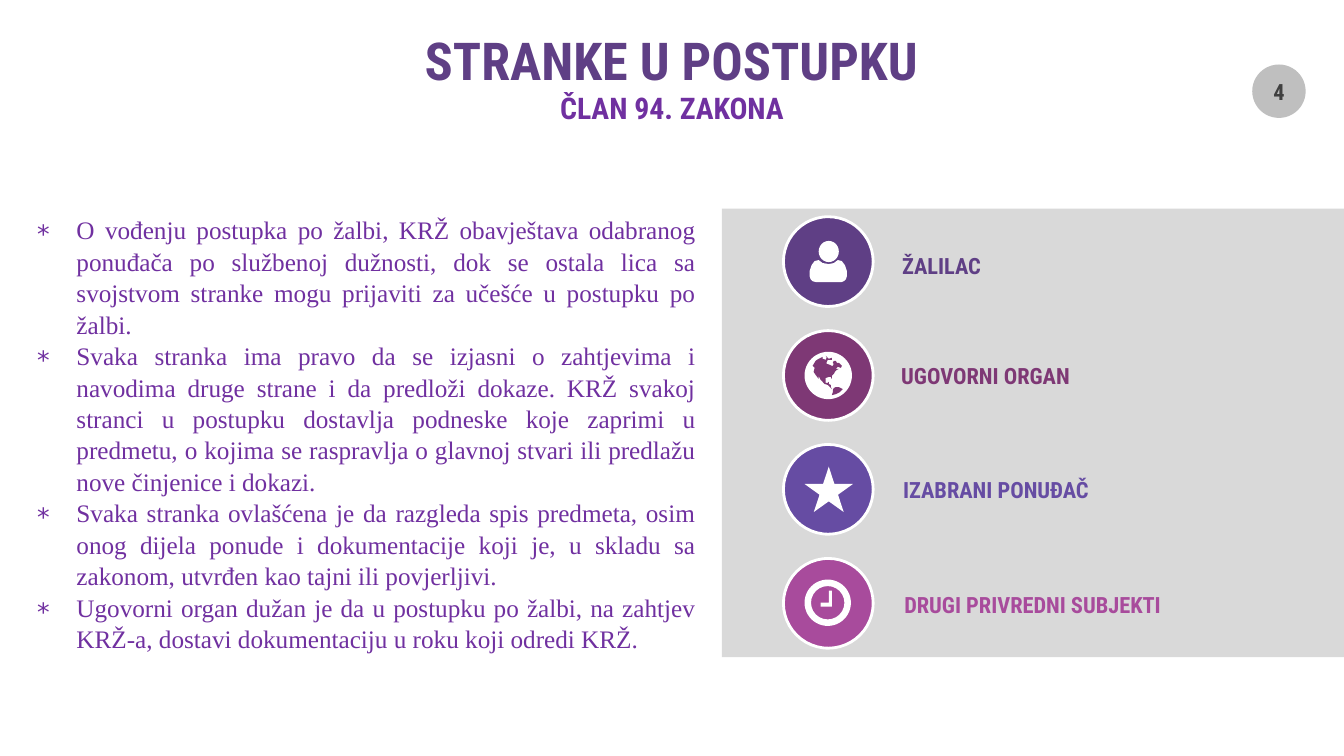
from lxml import etree
from pptx import Presentation
from pptx.dml.color import RGBColor
from pptx.enum.shapes import MSO_SHAPE as SHAPE
from pptx.enum.text import MSO_ANCHOR as ANCHOR, PP_ALIGN as ALIGN
from pptx.oxml.ns import qn
from pptx.util import Inches, Pt

HEADING_FONT = "Roboto Condensed"
WHITE = "FFFFFF"
VIOLET = "7030A0"


def paint(obj, fill=None, line=None, font=None, size=None, name=HEADING_FONT, bold=True):
    if fill:
        obj.shadow.inherit = False
        obj.fill.solid()
        obj.fill.fore_color.rgb = RGBColor.from_string(fill)
        if line:
            obj.line.color.rgb = RGBColor.from_string(line)
            obj.line.width = Pt(2)
        else:
            obj.line.fill.background()
    if font:
        obj.font.name = name
        obj.font.size = Pt(size)
        obj.font.bold = bold
        obj.font.color.rgb = RGBColor.from_string(font)


def add(kind, x, y, w, h, fill, line=None):
    sp = s.shapes.add_shape(kind, Inches(x), Inches(y), Inches(w), Inches(h))
    paint(sp, fill, line)
    return sp


prs = Presentation()
prs.slide_width, prs.slide_height = Inches(13.33), Inches(7.5)
s = prs.slides.add_slide(prs.slide_layouts[5])

badge = add(SHAPE.OVAL, 12.42, 0.64, 0.53, 0.53, "BFBFBF")
title = s.shapes.title
title.left, title.top = Inches(3.19), Inches(0.29)
title.width, title.height = Inches(6.94), Inches(0.61)
subtitle = s.shapes.add_textbox(Inches(4.77), Inches(0.92), Inches(3.79), Inches(0.29))

for sp, text, size, color in (
    (badge, "4", 16, "404040"),
    (title, "STRANKE U POSTUPKU", 37.3, "5F3F85"),
    (subtitle, "ČLAN 94. ZAKONA", 21.3, VIOLET),
):
    tf = sp.text_frame
    tf.margin_left = tf.margin_right = tf.margin_top = tf.margin_bottom = 0
    tf.vertical_anchor = ANCHOR.MIDDLE
    tf.word_wrap = sp is not title
    p = tf.paragraphs[0]
    p.text = text
    p.alignment = ALIGN.CENTER
    paint(p, font=color, size=size)

add(SHAPE.RECTANGLE, 7.16, 2.07, 6.17, 4.45, "D9D9D9")

parties = [
    ("ŽALILAC", "5F3F85", 8.85, 2.45, 1.16),
    ("UGOVORNI ORGAN", "7E3875", 8.84, 3.54, 2.32),
    ("IZABRANI PONUĐAČ", "664CA3", 8.86, 4.67, 2.47),
    ("DRUGI PRIVREDNI SUBJEKTI", "A84B9C", 8.87, 5.82, 3.38),
]
for i, (text, color, x, y, w) in enumerate(parties):
    add(SHAPE.OVAL, 7.77, 2.15 + 1.13 * i, 0.89, 0.89, color, WHITE)
    tf = s.shapes.add_textbox(Inches(x), Inches(y), Inches(w), Inches(0.37)).text_frame
    tf.word_wrap = False
    p = tf.paragraphs[0]
    p.text = text
    paint(p, font=color, size=16)

add(SHAPE.OVAL, 8.12, 2.39, 0.2, 0.21, WHITE)
add(SHAPE.OVAL, 7.98, 3.49, 0.47, 0.47, WHITE)
add(SHAPE.STAR_5_POINT, 7.98, 4.63, 0.48, 0.45, WHITE)
clock = add(SHAPE.DONUT, 7.98, 5.75, 0.46, 0.46, WHITE)
clock.adjustments[0] = 0.14

shoulders = [
    (834, 280), (810, 280), (806, 279), (804, 277), (803, 274), (803, 269), (805, 263),
    (808, 259), (812, 258), (816, 261), (822, 262), (827, 261), (831, 258), (835, 259),
    (838, 263), (840, 269), (840, 274), (839, 277), (837, 279),
]
north_america = [
    (829, 366), (831, 364), (834, 365), (835, 363), (833, 361), (832, 360), (830, 360),
    (829, 358), (827, 358), (826, 360), (827, 361), (826, 363), (825, 363), (823, 362),
    (820, 361), (820, 359), (821, 357), (823, 357), (825, 357), (825, 355), (822, 356),
    (820, 354), (819, 353), (820, 355), (819, 357), (816, 356), (816, 354), (812, 356),
    (809, 358), (806, 363), (808, 365), (807, 369), (809, 372), (812, 376), (812, 373),
    (814, 377), (816, 379), (818, 381), (821, 382), (823, 384), (825, 386), (824, 384),
    (824, 382), (822, 381), (822, 379), (821, 380), (819, 380), (819, 375), (822, 374),
    (824, 374), (825, 376), (825, 373), (827, 371), (828, 369), (830, 367), (832, 366),
]
south_america = [
    (836, 386), (834, 385), (832, 384), (829, 384), (827, 385), (826, 387), (826, 389),
    (825, 392), (829, 391), (833, 389),
]
clock_hands = [(814, 598), (822, 598), (822, 586), (825, 586), (825, 602), (814, 602)]

for outline, color in (
    (shoulders, WHITE),
    (north_america, parties[1][1]),
    (south_america, parties[1][1]),
    (clock_hands, WHITE),
):
    builder = s.shapes.build_freeform(*outline[0], scale=Inches(0.01))
    builder.add_line_segments(outline[1:], close=True)
    paint(builder.convert_to_shape(), color)

rules = [
    "O vođenju postupka po žalbi, KRŽ obavještava odabranog ponuđača po službenoj dužnosti, "
    "dok se ostala lica sa svojstvom stranke mogu prijaviti za učešće u postupku po žalbi.",
    "Svaka stranka ima pravo da se izjasni o zahtjevima i navodima druge strane i da predloži "
    "dokaze. KRŽ svakoj stranci u postupku dostavlja podneske koje zaprimi u predmetu, o kojima "
    "se raspravlja o glavnoj stvari ili predlažu nove činjenice i dokazi.",
    "Svaka stranka ovlašćena je da razgleda spis predmeta, osim onog dijela ponude i "
    "dokumentacije koji je, u skladu sa zakonom, utvrđen kao tajni ili povjerljivi.",
    "Ugovorni organ dužan je da u postupku po žalbi, na zahtjev KRŽ-a, dostavi dokumentaciju "
    "u roku koji odredi KRŽ.",
]
tf = s.shapes.add_textbox(Inches(0.27), Inches(2.07), Inches(6.73), Inches(4.34)).text_frame
tf.word_wrap = True
for i, text in enumerate(rules):
    p = tf.add_paragraph() if i else tf.paragraphs[0]
    p.text = text
    p.alignment = ALIGN.JUSTIFY
    p.line_spacing = 1.04
    pPr = p._p.get_or_add_pPr()
    pPr.set("marL", str(Inches(0.39)))
    pPr.set("indent", str(-Inches(0.39)))
    etree.SubElement(pPr, qn("a:buChar")).set("char", "⁎")
    paint(p, font=VIOLET, size=18, name="Times New Roman", bold=False)

prs.save("out.pptx")
